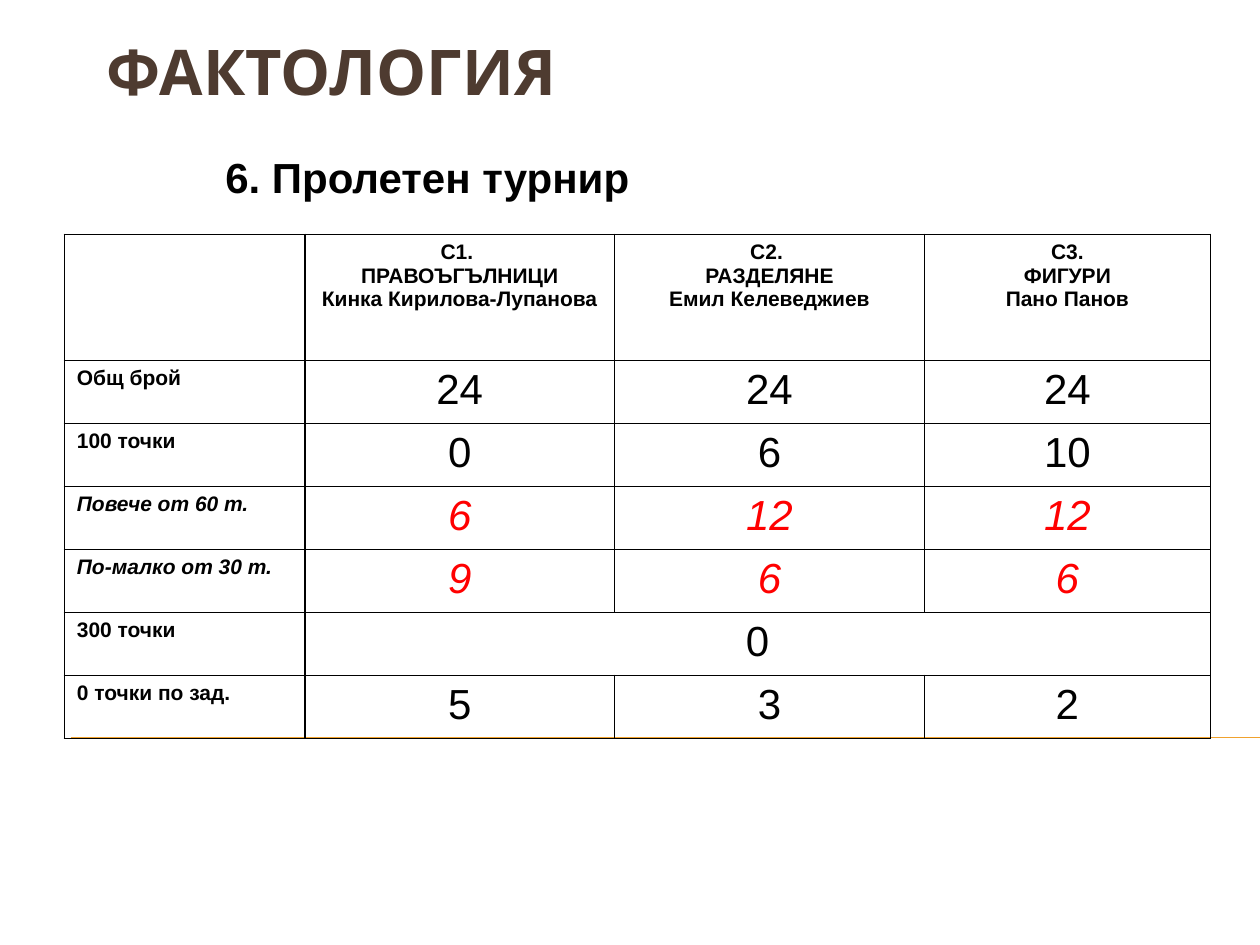
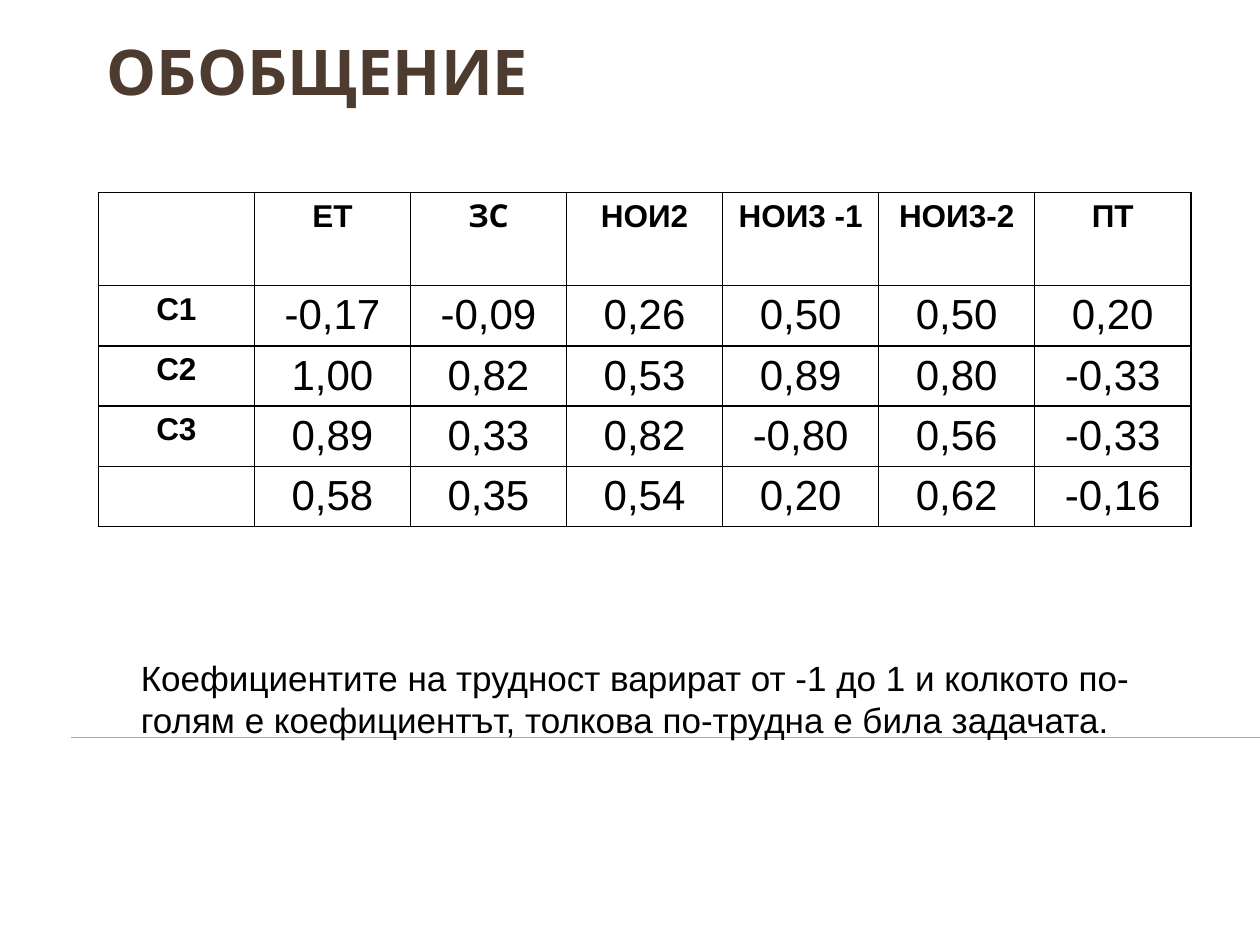
import pptx
import pptx.dml.color
import pptx.enum.shapes
import pptx.enum.text
import pptx.oxml
import pptx.oxml.ns
import pptx.util

Pt = pptx.util.Pt
ALIGN = pptx.enum.text.PP_ALIGN
ANCHOR = pptx.enum.text.MSO_ANCHOR

BLACK = "000000"
RED = "FF0000"
BROWN = "4E3B30"
ORANGE = "F0A22E"
BODY_FONT = "Arial"
TITLE_FONT = "Karla"

RESULTS = [
    ("Общ брой", ["24", "24", "24"]),
    ("100 точки", ["0", "6", "10"]),
    ("Повече от 60 т.", ["6", "12", "12"]),
    ("По-малко от 30 т.", ["9", "6", "6"]),
    ("300 точки", ["0"]),
    ("0 точки по зад.", ["5", "3", "2"]),
]
RESULT_HEADS = [
    ["С1. ", "ПРАВОЪГЪЛНИЦИ", "Кинка Кирилова-Лупанова"],
    ["С2. ", "РАЗДЕЛЯНЕ", "Емил Келеведжиев"],
    ["С3.", "ФИГУРИ", "Пано Панов"],
]
HIGHLIGHTED = {"Повече от 60 т.", "По-малко от 30 т."}

CONTESTS = ["ET", "ЗС", "НОИ2", "НОИ3 -1", "НОИ3-2", "ПТ"]
COEFFICIENTS = [
    ("С1", ["-0,17", "-0,09", "0,26", "0,50", "0,50", "0,20"]),
    ("С2", ["1,00", "0,82", "0,53", "0,89", "0,80", "-0,33"]),
    ("С3", ["0,89", "0,33", "0,82", "-0,80", "0,56", "-0,33"]),
    ("", ["0,58", "0,35", "0,54", "0,20", "0,62", "-0,16"]),
]


def rgb(hex_color):
    return pptx.dml.color.RGBColor.from_string(hex_color)


def write(tf, lines, size, font=BODY_FONT, color=BLACK, bold=False,
          italic=False, align=ALIGN.LEFT):
    for i, line in enumerate(lines):
        p = tf.add_paragraph() if i else tf.paragraphs[0]
        p.alignment = align
        r = p.add_run()
        r.text = line
        r.font.size = Pt(size)
        r.font.name = font
        r.font.bold = bold
        r.font.italic = italic
        r.font.color.rgb = rgb(color)


def add_text(s, box, text, size, anchor=ANCHOR.TOP, **style):
    sp = s.shapes.add_textbox(*map(Pt, box))
    tf = sp.text_frame
    tf.word_wrap = True
    tf.vertical_anchor = anchor
    write(tf, [text], size, **style)


def add_rule(s):
    line = s.shapes.add_connector(pptx.enum.shapes.MSO_CONNECTOR.STRAIGHT,
                                  Pt(40.5), Pt(421.3), Pt(720), Pt(421.3))
    line.line.color.rgb = rgb(ORANGE)
    line.line.width = Pt(0.75)
    pptx.oxml.ns.qn("a:effectLst")
    line._element.spPr.append(pptx.oxml.parse_xml(
        f'<a:effectLst {pptx.oxml.ns.nsdecls("a")}/>'))


def add_slide(prs, title):
    s = prs.slides.add_slide(prs.slide_layouts[6])
    add_rule(s)
    add_text(s, (54, 15, 623.5, 73.5), title, 36, font=TITLE_FONT,
             color=BROWN, bold=True)
    return s


def set_borders(cell):
    tcPr = cell._tc.get_or_add_tcPr()
    for i, side in enumerate(("lnL", "lnR", "lnT", "lnB")):
        tcPr.insert(i, pptx.oxml.parse_xml(
            f'<a:{side} {pptx.oxml.ns.nsdecls("a")} w="{Pt(1)}">'
            f'<a:solidFill><a:srgbClr val="{BLACK}"/></a:solidFill>'
            f'</a:{side}>'))


def add_grid(s, left, top, widths, heights):
    frame = s.shapes.add_table(len(heights), len(widths), Pt(left), Pt(top),
                               Pt(sum(widths)), Pt(sum(heights)))
    table = frame.table
    table.first_row = False
    table.horz_banding = False
    for column, width in zip(table.columns, widths):
        column.width = Pt(width)
    for row, height in zip(table.rows, heights):
        row.height = Pt(height)
    for cell in table.iter_cells():
        cell.fill.background()
        cell.margin_bottom = Pt(2)
        set_borders(cell)
    return table


def add_results_table(s):
    table = add_grid(s, 36.75, 134, [137.5, 177, 177, 163.5], [72] + [36] * 6)
    for c, head in enumerate(RESULT_HEADS, 1):
        write(table.cell(0, c).text_frame, head, 12, bold=True,
              align=ALIGN.CENTER)
    for r, (label, values) in enumerate(RESULTS, 1):
        marked = label in HIGHLIGHTED
        write(table.cell(r, 0).text_frame, [label], 12, bold=True,
              italic=marked)
        if len(values) == 1:
            table.cell(r, 1).merge(table.cell(r, 3))
        for c, value in enumerate(values, 1):
            write(table.cell(r, c).text_frame, [value], 24, italic=marked,
                  color=RED if marked else BLACK, align=ALIGN.CENTER)


def add_coefficients_table(s):
    table = add_grid(s, 56.2, 110, [89.2] * 7, [53.2] + [34] * 4)
    for c, contest in enumerate(CONTESTS, 1):
        write(table.cell(0, c).text_frame, [contest], 18, bold=True,
              font=TITLE_FONT if contest == "ЗС" else BODY_FONT,
              align=ALIGN.CENTER)
    for r, (label, values) in enumerate(COEFFICIENTS, 1):
        if label:
            write(table.cell(r, 0).text_frame, [label], 18, bold=True,
                  align=ALIGN.CENTER)
        for c, value in enumerate(values, 1):
            write(table.cell(r, c).text_frame, [value], 24,
                  align=ALIGN.CENTER)


def main():
    prs = pptx.Presentation()
    prs.slide_width, prs.slide_height = Pt(720), Pt(540)

    s = add_slide(prs, "ФАКТОЛОГИЯ")
    add_text(s, (121.7, 83, 254, 36.5), "6. Пролетен турнир", 24,
             anchor=ANCHOR.MIDDLE, bold=True)
    add_results_table(s)

    s = add_slide(prs, "ОБОБЩЕНИЕ")
    add_coefficients_table(s)
    add_text(s, (73.4, 371.5, 584.6, 55.5),
             "Коефициентите на трудност варират от -1 до 1 и колкото "
             "по-голям е коефициентът, толкова по-трудна е била задачата.", 20)

    prs.save("out.pptx")


if __name__ == "__main__":
    main()
